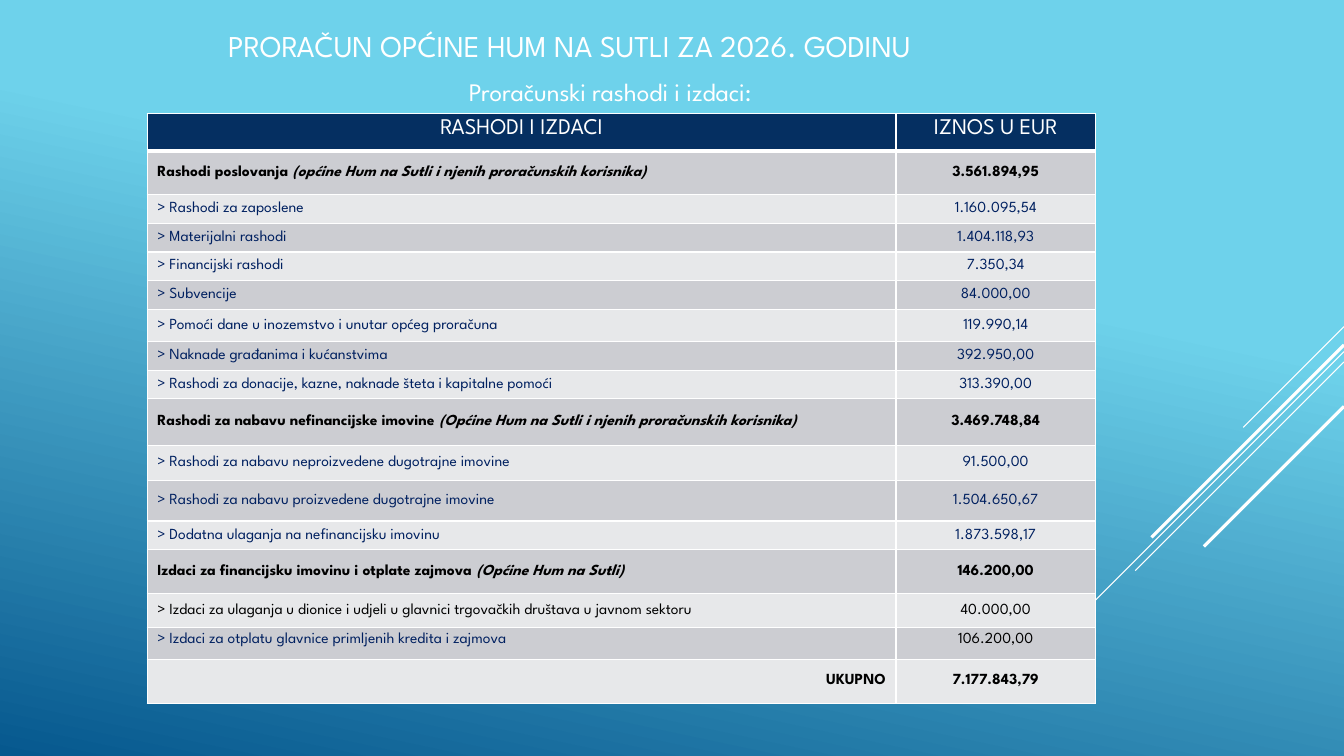
from lxml import etree
from pptx import Presentation
from pptx.dml.color import RGBColor
from pptx.enum.shapes import MSO_CONNECTOR
from pptx.enum.text import MSO_ANCHOR, MSO_AUTO_SIZE, PP_ALIGN
from pptx.oxml.ns import qn
from pptx.util import Cm, Pt

LEFT, CENTER, RIGHT = PP_ALIGN.LEFT, PP_ALIGN.CENTER, PP_ALIGN.RIGHT
TOP, MIDDLE, BOTTOM = MSO_ANCHOR.TOP, MSO_ANCHOR.MIDDLE, MSO_ANCHOR.BOTTOM
STRAIGHT = MSO_CONNECTOR.STRAIGHT
NO_AUTOFIT = MSO_AUTO_SIZE.NONE

FONT = "League Spartan"
COLORS = {
    "white": "FFFFFF", "black": "000000", "navy": "002060", "header": "052F61",
    "dark_band": "CCCDD2", "light_band": "E7E8EA", "sky": "6ED2EB", "deep": "06588E",
}

TITLE = "PRORAČUN OPĆINE HUM NA SUTLI ZA 2026. GODINU"
SUBTITLE = "Proračunski rashodi i izdaci:"
HEADERS = ("RASHODI I IZDACI", "IZNOS U EUR")
HEADER_HEIGHT = 0.95

# label, note, amount, row height
GROUPS = [
    (("Rashodi poslovanja", "(općine Hum na Sutli i njenih proračunskih korisnika)", "3.561.894,95", 1.1), [
        ("> Rashodi za zaposlene", "1.160.095,54", 0.72),
        ("> Materijalni rashodi", "1.404.118,93", 0.72),
        ("> Financijski rashodi", "7.350,34", 0.72),
        ("> Subvencije", "84.000,00", 0.72),
        ("> Pomoći dane u inozemstvo i unutar općeg proračuna", "119.990,14", 0.82),
        ("> Naknade građanima i kućanstvima", "392.950,00", 0.72),
        ("> Rashodi za donacije, kazne, naknade šteta i kapitalne pomoći", "313.390,00", 0.72),
    ]),
    (("Rashodi za nabavu nefinancijske imovine", "(Općine Hum na Sutli i njenih proračunskih korisnika)", "3.469.748,84", 1.18), [
        ("> Rashodi za nabavu neproizvedene dugotrajne imovine", "91.500,00", 0.88),
        ("> Rashodi za nabavu proizvedene dugotrajne imovine", "1.504.650,67", 1.02),
        ("> Dodatna ulaganja na nefinancijsku imovinu", "1.873.598,17", 0.72),
    ]),
    (("Izdaci za financijsku imovinu i otplate zajmova", "(Općine Hum na Sutli)", "146.200,00", 1.11), [
        ("> Izdaci za ulaganja u dionice i udjeli u glavnici trgovačkih društava u javnom sektoru", "40.000,00", 0.86),
        ("> Izdaci za otplatu glavnice primljenih kredita i zajmova", "106.200,00", 0.79),
    ]),
]
TOTAL = ("UKUPNO", "7.177.843,79", 1.11)
BLACK_LABELS = {"> Izdaci za ulaganja u dionice i udjeli u glavnici trgovačkih društava u javnom sektoru"}
BLACK_AMOUNTS = {"40.000,00", "106.200,00"}
TOP_ROW = "> Izdaci za otplatu glavnice primljenih kredita i zajmova"

SLIDE_WIDTH, SLIDE_HEIGHT = 33.87, 19.05
TABLE_LEFT, TABLE_TOP = 3.71, 2.86
COLUMN_WIDTHS = (18.87, 5.03)
# height at the right edge, run of the 45 degree line, line width
DIAGONALS = [
    (8.23, 2.54, 0.75), (8.86, 8.28, 0.75), (9.12, 5.26, 0.75),
    (8.69, 4.85, 2.25), (10.24, 3.53, 2.25),
]


def color(name):
    return RGBColor.from_string(COLORS[name])


def format_run(run, size, color_name, bold=False, italic=False):
    font = run.font
    font.name, font.size, font.bold, font.italic = FONT, Pt(size), bold, italic
    font.color.rgb = color(color_name)


def fill_placeholder(shape, text, box, size, alignment, anchor):
    shape.left, shape.top, shape.width, shape.height = (Cm(length) for length in box)
    frame = shape.text_frame
    frame.text = text
    frame.word_wrap = True
    frame.auto_size = NO_AUTOFIT
    frame.vertical_anchor = anchor
    paragraph = frame.paragraphs[0]
    paragraph.alignment = alignment
    paragraph.space_before = Pt(0)
    format_run(paragraph.runs[0], size, "white")
    return paragraph


def set_borders(cell, top=1, bottom=1):
    properties = cell._tc.get_or_add_tcPr()
    for side, width in (("L", 1), ("R", 1), ("T", top), ("B", bottom)):
        line = etree.SubElement(properties, qn(f"a:ln{side}"), w=str(Pt(width)))
        fill = etree.SubElement(line, qn("a:solidFill"))
        etree.SubElement(fill, qn("a:srgbClr"), val=COLORS["white"])


def fill_cell(cell, texts, size, color_name, band, alignment, anchor, bold=False):
    cell.fill.solid()
    cell.fill.fore_color.rgb = color(band)
    cell.vertical_anchor = anchor
    paragraph = cell.text_frame.paragraphs[0]
    paragraph.alignment = alignment
    for position, text in enumerate(texts):
        run = paragraph.add_run()
        run.text = text
        format_run(run, size, color_name, bold, italic=position > 0)


def table_rows():
    rows = []
    for (label, note, amount, height), items in GROUPS:
        rows.append(((f"{label} ", note), amount, height, True, LEFT))
        rows += [((item,), value, item_height, False, LEFT) for item, value, item_height in items]
    label, amount, height = TOTAL
    rows.append(((label,), amount, height, True, RIGHT))
    return rows


def add_budget_table(slide):
    rows = table_rows()
    heights = [HEADER_HEIGHT] + [row[2] for row in rows]
    table = slide.shapes.add_table(
        len(heights), len(HEADERS), Cm(TABLE_LEFT), Cm(TABLE_TOP),
        Cm(sum(COLUMN_WIDTHS)), Cm(sum(heights))).table
    table.horz_banding = False
    for column, width in zip(table.columns, COLUMN_WIDTHS):
        column.width = Cm(width)
    for index, height in enumerate(heights):
        table.rows[index].height = Cm(height)
        for column in range(len(HEADERS)):
            set_borders(table.cell(index, column), 3 if index == 1 else 1, 3 if index == 0 else 1)
    for column, text in enumerate(HEADERS):
        fill_cell(table.cell(0, column), (text,), 16, "white", "header", CENTER, TOP)
    for index, (texts, amount, _, bold, alignment) in enumerate(rows, 1):
        band = "dark_band" if index % 2 else "light_band"
        anchor = TOP if texts[0] == TOP_ROW else MIDDLE
        label_color = "black" if bold or texts[0] in BLACK_LABELS else "navy"
        amount_color = "black" if bold or amount in BLACK_AMOUNTS else "navy"
        fill_cell(table.cell(index, 0), texts, 11, label_color, band, alignment, anchor, bold)
        fill_cell(table.cell(index, 1), (amount,), 11, amount_color, band, CENTER, anchor, bold)


def add_diagonal(slide, height, run, width):
    connector = slide.shapes.add_connector(
        STRAIGHT, Cm(SLIDE_WIDTH), Cm(height), Cm(SLIDE_WIDTH - run), Cm(height + run))
    connector.line.color.rgb = color("white")
    connector.line.width = Pt(width)
    etree.SubElement(connector._element.spPr, qn("a:effectLst"))


def main():
    presentation = Presentation()
    presentation.slide_width, presentation.slide_height = Cm(SLIDE_WIDTH), Cm(SLIDE_HEIGHT)
    slide = presentation.slides.add_slide(presentation.slide_layouts[1])

    background = slide.background.fill
    background.gradient()
    background.gradient_angle = 258
    for stop, position, name in zip(background.gradient_stops, (0.35, 1), ("sky", "deep")):
        stop.position = position
        stop.color.rgb = color(name)

    for diagonal in DIAGONALS:
        add_diagonal(slide, *diagonal)

    fill_placeholder(slide.shapes.title, TITLE, (2.57, 0.48, 23.57, 1.35), 21.6, CENTER, MIDDLE)
    subtitle = fill_placeholder(
        slide.placeholders[1], SUBTITLE, (6.27, 1.22, 12.93, 1.6), 18, RIGHT, BOTTOM)
    properties = subtitle._p.get_or_add_pPr()
    properties.set("marL", "0")
    properties.set("indent", "0")
    etree.SubElement(properties, qn("a:buNone"))

    add_budget_table(slide)
    presentation.save("out.pptx")


if __name__ == "__main__":
    main()
